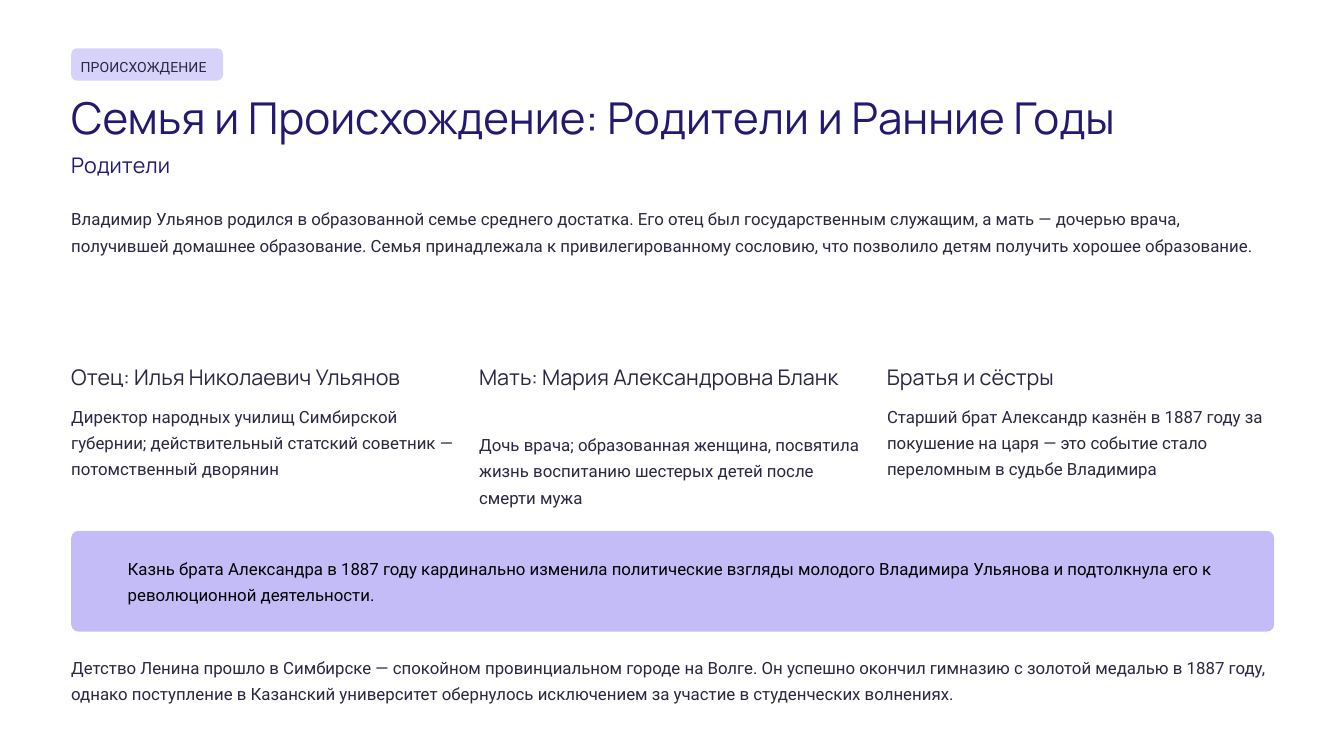
from dataclasses import dataclass

from pptx import Presentation
from pptx.dml.color import RGBColor
from pptx.enum.shapes import MSO_SHAPE as Shape
from pptx.util import Inches, Pt


@dataclass(frozen=True)
class TextStyle:
    font: str
    size: float
    color: str
    spacing: float


@dataclass(frozen=True)
class Theme:
    tag_fill: str = "D7D2F9"
    callout_fill: str = "C3BCF6"
    tag: TextStyle = TextStyle("Roboto", 7.5, "2A2742", 1.3)
    title: TextStyle = TextStyle("Manrope", 23.5, "231971", 1.04)
    subtitle: TextStyle = TextStyle("Manrope", 11.5, "231971", 1.04)
    heading: TextStyle = TextStyle("Manrope", 11.5, "2A2742", 1.04)
    body: TextStyle = TextStyle("Roboto", 9, "2A2742", 1.3)
    callout: TextStyle = TextStyle("Roboto", 9, "000000", 1.3)


@dataclass(frozen=True)
class Box:
    left: float
    top: float
    width: float
    height: float

    def emu(self) -> tuple:
        return tuple(Inches(v) for v in (self.left, self.top, self.width, self.height))


@dataclass(frozen=True)
class Relative:
    heading: str
    text: str
    heading_width: float
    heading_height: float = 0.21
    heading_wraps: bool = False


THEME = Theme()
MARGIN = 0.53
CONTENT_WIDTH = 8.95
COLUMN_WIDTH = 2.88
COLUMN_STEP = (CONTENT_WIDTH - COLUMN_WIDTH) / 2
COLUMN_TOP = 2.7
HEADING_GAP = 0.07

RELATIVES = (
    Relative("Отец: Илья Николаевич Ульянов",
             "Директор народных училищ Симбирской губернии; действительный "
             "статский советник — потомственный дворянин", 2.82),
    Relative("Мать: Мария Александровна Бланк",
             "Дочь врача; образованная женщина, посвятила жизнь воспитанию "
             "шестерых детей после смерти мужа", COLUMN_WIDTH, 0.42, True),
    Relative("Братья и сёстры",
             "Старший брат Александр казнён в 1887 году за покушение на царя — "
             "это событие стало переломным в судьбе Владимира", 1.64),
)


def add_text(s, box: Box, text: str, style: TextStyle, wrap: bool = True) -> None:
    tf = s.shapes.add_textbox(*box.emu()).text_frame
    tf.margin_left = tf.margin_right = tf.margin_top = tf.margin_bottom = 0
    tf.word_wrap = wrap
    tf.text = text
    p = tf.paragraphs[0]
    p.line_spacing = style.spacing
    font = p.runs[0].font
    font.name, font.size = style.font, Pt(style.size)
    font.color.rgb = RGBColor.from_string(style.color)


def add_panel(s, box: Box, fill: str, rounding: float) -> None:
    sp = s.shapes.add_shape(Shape.ROUNDED_RECTANGLE, *box.emu())
    sp.adjustments[0] = rounding
    sp.shadow.inherit = False
    sp.fill.solid()
    sp.fill.fore_color.rgb = RGBColor.from_string(fill)
    sp.line.fill.background()


def add_relative(s, left: float, relative: Relative) -> None:
    add_text(s, Box(left, COLUMN_TOP, relative.heading_width, relative.heading_height),
             relative.heading, THEME.heading, relative.heading_wraps)
    text_top = COLUMN_TOP + relative.heading_height + HEADING_GAP
    add_text(s, Box(left, text_top, COLUMN_WIDTH, 0.62), relative.text, THEME.body)


def main() -> None:
    prs = Presentation()
    prs.slide_width = Inches(10)
    prs.slide_height = prs.slide_width * 9 // 16
    s = prs.slides.add_slide(prs.slide_layouts[6])

    add_panel(s, Box(MARGIN, 0.36, 1.13, 0.24), THEME.tag_fill, 0.18)
    add_text(s, Box(0.6, 0.4, 1.48, 0.17), "ПРОИСХОЖДЕНИЕ", THEME.tag, wrap=False)
    add_text(s, Box(MARGIN, 0.66, 9.16, 0.41),
             "Семья и Происхождение: Родители и Ранние Годы", THEME.title, wrap=False)
    add_text(s, Box(MARGIN, 1.12, 2.14, 0.21), "Родители", THEME.subtitle, wrap=False)
    add_text(s, Box(MARGIN, 1.51, CONTENT_WIDTH, 0.62),
             "Владимир Ульянов родился в образованной семье среднего достатка. "
             "Его отец был государственным служащим, а мать — дочерью врача, "
             "получившей домашнее образование. Семья принадлежала к "
             "привилегированному сословию, что позволило детям получить хорошее "
             "образование.", THEME.body)

    for i, relative in enumerate(RELATIVES):
        add_relative(s, MARGIN + i * COLUMN_STEP, relative)

    add_panel(s, Box(MARGIN, 3.95, CONTENT_WIDTH, 0.75), THEME.callout_fill, 0.07)
    add_text(s, Box(0.95, 4.11, 8.39, 0.41),
             "Казнь брата Александра в 1887 году кардинально изменила политические "
             "взгляды молодого Владимира Ульянова и подтолкнула его к "
             "революционной деятельности.", THEME.callout)
    add_text(s, Box(MARGIN, 4.85, CONTENT_WIDTH, 0.41),
             "Детство Ленина прошло в Симбирске — спокойном провинциальном городе "
             "на Волге. Он успешно окончил гимназию с золотой медалью в 1887 году, "
             "однако поступление в Казанский университет обернулось исключением за "
             "участие в студенческих волнениях.", THEME.body)

    prs.save("out.pptx")


if __name__ == "__main__":
    main()
